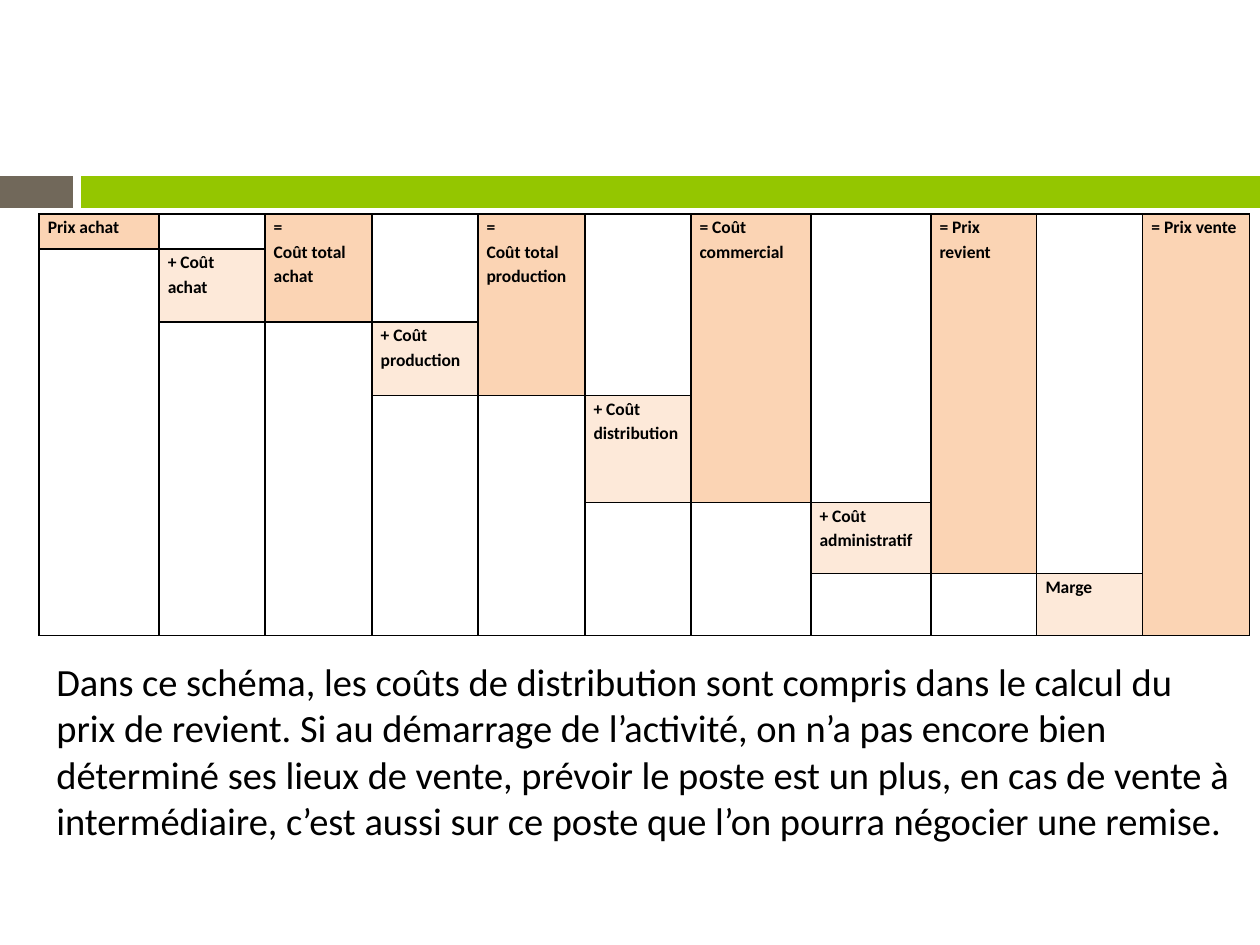
from pptx import Presentation
from pptx import util as u
from pptx.dml.color import RGBColor
from pptx.enum import shapes
from pptx.oxml.xmlchemy import OxmlElement

PX = 914400 // 126
FONT, BLACK = "Calibri", "000000"
BANDS = [(0, 73, "71685A"), (81, 1179, "94C600")]
TOTALS = [["Prix achat"], ["=", "Coût total achat"], ["=", "Coût total production"],
          ["= Coût commercial"], ["= Prix revient"], ["= Prix vente"]]
COSTS = ["+ Coût achat", "+ Coût production", "+ Coût distribution",
         "+ Coût administratif", "Marge"]
COLS = [120, 106, 107, 106, 107, 106, 120, 120, 106, 106, 107]
ROWS = [35, 71, 71, 107, 71, 62]
NOTE = ("Dans ce schéma, les coûts de distribution sont compris dans le calcul du prix de "
        "revient. Si au démarrage de l’activité, on n’a pas encore bien déterminé ses lieux "
        "de vente, prévoir le poste est un plus, en cas de vente à intermédiaire, c’est "
        "aussi sur ce poste que l’on pourra négocier une remise.")


def px(*values):
    return [u.Emu(v * PX) for v in values]


def rgb(value):
    return RGBColor.from_string(value)


def style(p, size, bold=False):
    p.font.name, p.font.size, p.font.bold = FONT, u.Pt(size), bold
    p.font.color.rgb = rgb(BLACK)


def add_borders(cell):
    tcPr = cell._tc.get_or_add_tcPr()
    for i, side in enumerate(("lnL", "lnR", "lnT", "lnB")):
        ln = OxmlElement(f"a:{side}")
        ln.set("w", str(u.Pt(1)))
        fill = OxmlElement("a:solidFill")
        color = OxmlElement("a:srgbClr")
        color.set("val", BLACK)
        fill.append(color)
        ln.append(fill)
        tcPr.insert(i, ln)


def fill_block(table, col, top, bottom, lines=(), color=None):
    if top > bottom:
        return
    cell = table.cell(top, col)
    if bottom > top:
        cell.merge(table.cell(bottom, col))
    if color:
        cell.fill.solid()
        cell.fill.fore_color.rgb = rgb(color)
    tf = cell.text_frame
    tf.text = "\n".join(lines)
    for p in tf.paragraphs:
        p.line_spacing = 1.15
        style(p, 10, True)


prs = Presentation()
prs.slide_width, prs.slide_height = px(1260, 945)
s = prs.slides.add_slide(prs.slide_layouts[6])

for left, width, color in BANDS:
    sp = s.shapes.add_shape(shapes.MSO_SHAPE.RECTANGLE, *px(left, 176, width, 32))
    sp.shadow.inherit = False
    sp.fill.solid()
    sp.fill.fore_color.rgb = rgb(color)
    sp.line.fill.background()

frame = s.shapes.add_table(len(ROWS), len(COLS), *px(39, 214, sum(COLS), sum(ROWS)))
table = frame.table
table.first_row = table.horz_banding = False
for column, width in zip(table.columns, px(*COLS)):
    column.width = width
for row, height in zip(table.rows, px(*ROWS)):
    row.height = height
for cell in table.iter_cells():
    cell.margin_left = cell.margin_right = u.Inches(0.07)
    cell.margin_top = cell.margin_bottom = 0
    cell.fill.background()
    add_borders(cell)
    cell.text_frame.paragraphs[0]._p.get_or_add_endParaRPr().set("sz", "1000")

last = len(ROWS) - 1
for k, lines in enumerate(TOTALS):
    fill_block(table, 2 * k, 0, k, lines, "FBD4B4")
    fill_block(table, 2 * k, k + 1, last)
for k, line in enumerate(COSTS):
    fill_block(table, 2 * k + 1, 0, k)
    fill_block(table, 2 * k + 1, k + 1, k + 1, [line], "FDE9D9")
    fill_block(table, 2 * k + 1, k + 2, last)

tf = s.shapes.add_textbox(*px(44, 652, 1201, 246)).text_frame
tf.word_wrap = True
tf.text = NOTE
style(tf.paragraphs[0], 22)

prs.save("out.pptx")
